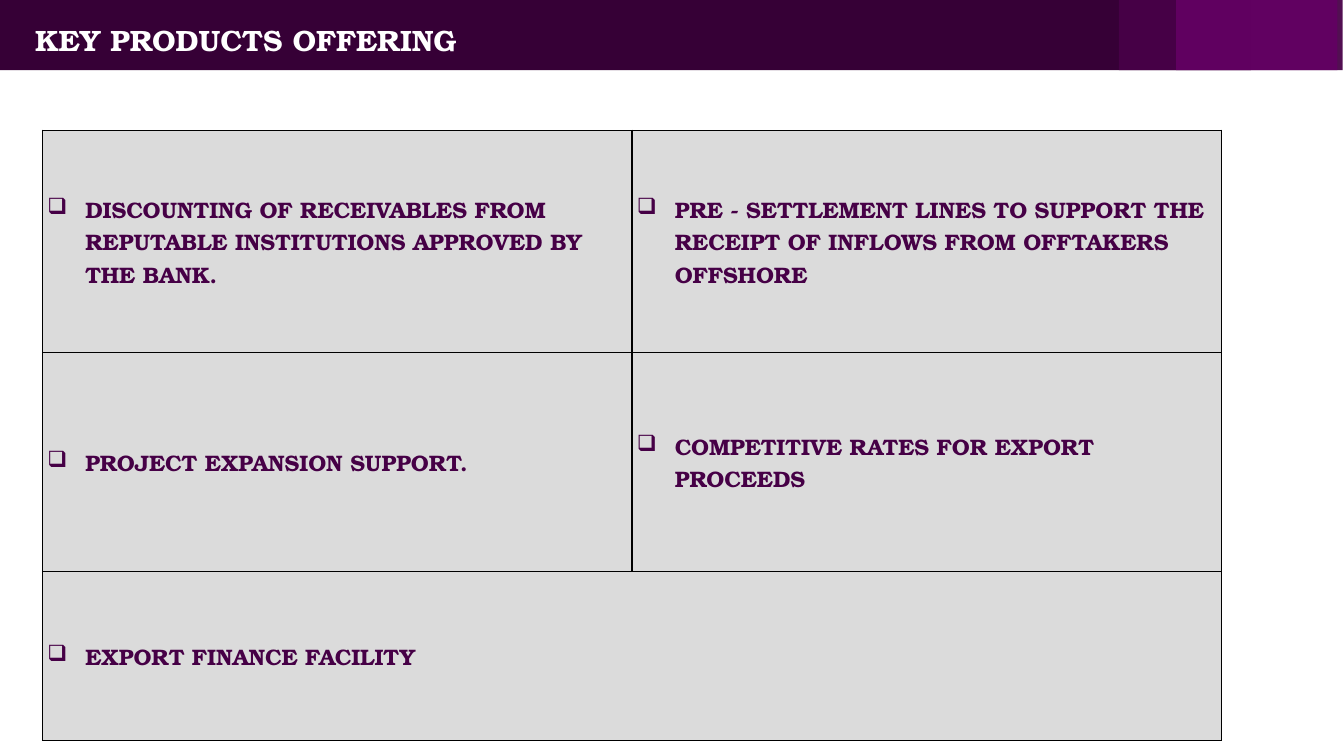
"""Build the key products offering slide."""
import pptx
import pptx.dml.color
import pptx.enum.shapes
import pptx.enum.text
import pptx.oxml
import pptx.oxml.ns
import pptx.util
from lxml import etree

Pt = pptx.util.Pt
RGBColor = pptx.dml.color.RGBColor
qn = pptx.oxml.ns.qn

FONT = "TeX Gyre Bonum"
WHITE = RGBColor(0xFF, 0xFF, 0xFF)
BLACK = RGBColor(0x00, 0x00, 0x00)
GREY = RGBColor(0xDB, 0xDB, 0xDB)
PLUM = RGBColor(0x46, 0x00, 0x46)
BAND_DARK = RGBColor(0x36, 0x00, 0x36)
BAND_MIDDLE = RGBColor(0x48, 0x00, 0x48)
BAND_LIGHT = RGBColor(0x64, 0x00, 0x64)

TITLE = "KEY PRODUCTS OFFERING"
PRODUCTS = [
    ["DISCOUNTING OF RECEIVABLES FROM REPUTABLE INSTITUTIONS APPROVED BY THE BANK.",
     "PRE - SETTLEMENT LINES TO SUPPORT THE RECEIPT OF INFLOWS FROM OFFTAKERS OFFSHORE"],
    ["PROJECT EXPANSION SUPPORT.", "COMPETITIVE RATES FOR EXPORT PROCEEDS"],
    ["EXPORT FINANCE FACILITY"],
]
HEADER_BANDS = [
    (-1.4, 895, BAND_DARK, 100),
    (799.2, 159.8, BAND_MIDDLE, 94),
    (840.2, 115.2, BAND_LIGHT, 87),
]
HEADER_HEIGHT = 50.2
TABLE_LEFT, TABLE_TOP = 30.3, 93
COLUMN_WIDTH = 421.1
ROW_HEIGHTS = [158.8, 156.5, 120.4]
INSET = 3.6
INDENT = 27


def style_runs(paragraph, size, color):
    for run in paragraph.runs:
        run.font.name = FONT
        run.font.size = Pt(size)
        run.font.bold = True
        run.font.color.rgb = color


def set_insets(target):
    target.margin_left = target.margin_right = Pt(INSET)
    target.margin_top = target.margin_bottom = Pt(INSET)


def add_band(slide, left, width, color, opacity):
    shape = slide.shapes.add_shape(
        pptx.enum.shapes.MSO_SHAPE.RECTANGLE, Pt(left), 0, Pt(width), Pt(HEADER_HEIGHT))
    shape.shadow.inherit = False
    shape.fill.solid()
    shape.fill.fore_color.rgb = color
    shape.line.fill.background()
    if opacity < 100:
        color_element = shape.fill._xPr.find(qn("a:solidFill"))[0]
        etree.SubElement(color_element, qn("a:alpha"), val=str(opacity * 1000))


def add_title(slide):
    text_frame = slide.shapes.add_textbox(Pt(21.6), Pt(12.2), Pt(309.6), Pt(32.4)).text_frame
    set_insets(text_frame)
    text_frame.word_wrap = False
    text_frame.auto_size = pptx.enum.text.MSO_AUTO_SIZE.SHAPE_TO_FIT_TEXT
    text_frame.text = TITLE
    style_runs(text_frame.paragraphs[0], 21, WHITE)


def add_borders(cell):
    properties = cell._tc.get_or_add_tcPr()
    for position, side in enumerate(("lnL", "lnR", "lnT", "lnB")):
        line = etree.Element(qn("a:" + side), w=str(Pt(1)))
        fill = etree.SubElement(line, qn("a:solidFill"))
        etree.SubElement(fill, qn("a:srgbClr"), val=str(BLACK))
        properties.insert(position, line)


def style_cell(cell):
    set_insets(cell)
    cell.vertical_anchor = pptx.enum.text.MSO_ANCHOR.MIDDLE
    cell.fill.solid()
    cell.fill.fore_color.rgb = GREY
    add_borders(cell)


def write_product(cell, product):
    cell.text_frame.text = product
    paragraph = cell.text_frame.paragraphs[0]
    properties = paragraph._p.get_or_add_pPr()
    properties.set("marL", str(Pt(INDENT)))
    properties.set("indent", str(-Pt(INDENT)))
    etree.SubElement(properties, qn("a:buChar"), char="❑")
    style_runs(paragraph, 16, PLUM)


def add_products(slide):
    columns = max(len(row) for row in PRODUCTS)
    table = slide.shapes.add_table(
        len(PRODUCTS), columns, Pt(TABLE_LEFT), Pt(TABLE_TOP),
        Pt(columns * COLUMN_WIDTH), Pt(sum(ROW_HEIGHTS))).table
    table.first_row = table.horz_banding = False
    for column in table.columns:
        column.width = Pt(COLUMN_WIDTH)
    for row_index, products in enumerate(PRODUCTS):
        table.rows[row_index].height = Pt(ROW_HEIGHTS[row_index])
        for cell in table.rows[row_index].cells:
            style_cell(cell)
        for column_index, product in enumerate(products):
            write_product(table.cell(row_index, column_index), product)
        if len(products) < columns:
            table.cell(row_index, len(products) - 1).merge(table.cell(row_index, columns - 1))


def main():
    presentation = pptx.Presentation()
    presentation.slide_width, presentation.slide_height = Pt(960), Pt(540)
    slide = presentation.slides.add_slide(presentation.slide_layouts[6])
    for band in HEADER_BANDS:
        add_band(slide, *band)
    add_title(slide)
    add_products(slide)
    presentation.save("out.pptx")


if __name__ == "__main__":
    main()
